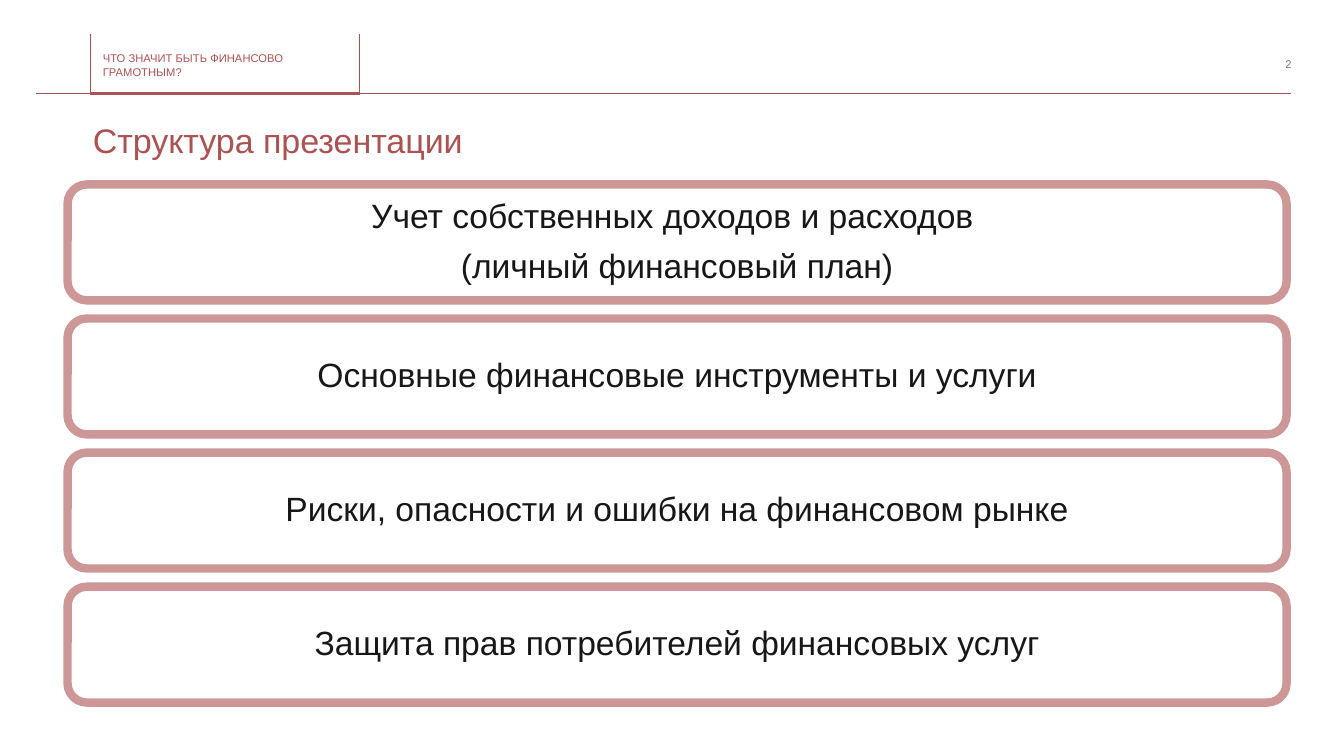
from lxml.etree import SubElement
from pptx import Presentation
from pptx.dml.color import RGBColor
from pptx.enum.shapes import MSO_CONNECTOR, MSO_SHAPE
from pptx.enum.text import MSO_ANCHOR, PP_ALIGN
from pptx.oxml.ns import qn
from pptx.util import Inches, Pt

RED = RGBColor(0xAB, 0x52, 0x53)
PINK = RGBColor(0xCD, 0x97, 0x97)
GRAY = RGBColor(0x77, 0x77, 0x7A)
DARK = RGBColor(0x18, 0x17, 0x17)
WHITE = RGBColor(0xFF, 0xFF, 0xFF)
FONT = "Arial"

SECTION = "ЧТО ЗНАЧИТ БЫТЬ ФИНАНСОВО ГРАМОТНЫМ?"
TITLE = "Структура презентации"
PAGE_NUMBER = "2"
TOPICS = [
    "Учет собственных доходов и расходов \n(личный финансовый план)",
    "Основные финансовые инструменты и услуги",
    "Риски, опасности и ошибки на финансовом рынке",
    "Защита прав потребителей финансовых услуг",
]

# start x, start y, end x, end y in inches, width in points
HEADER_LINES = [
    (0.89, 0.92, 0.36, 0.92, 0.25),
    (3.57, 0.93, 0.89, 0.93, 2.25),
    (12.8, 0.92, 3.55, 0.92, 0.25),
    (0.89, 0.93, 0.89, 0.34, 0.25),
    (3.56, 0.93, 3.56, 0.34, 0.25),
]

CARD_LEFT, CARD_TOP, CARD_WIDTH, CARD_HEIGHT = 0.67, 1.83, 12.09, 1.15
CARD_PITCH = 1.33


def write_text(shape, text, size, color, align=PP_ALIGN.LEFT, inset=0,
               line_spacing=1.0, space_after=0):
    """Fill a shape with middle-anchored, uniformly formatted text."""
    frame = shape.text_frame
    frame.word_wrap = True
    frame.vertical_anchor = MSO_ANCHOR.MIDDLE
    frame.margin_left = frame.margin_right = Inches(inset)
    frame.margin_top = frame.margin_bottom = Inches(inset)
    frame.text = text
    for paragraph in frame.paragraphs:
        paragraph.alignment = align
        paragraph.line_spacing = line_spacing
        paragraph.space_after = Pt(space_after)
        for run in paragraph.runs:
            run.font.name = FONT
            run.font.size = Pt(size)
            run.font.color.rgb = color


def add_label(slide, box, *text_arguments, **text_options):
    label = slide.shapes.add_textbox(*map(Inches, box))
    write_text(label, *text_arguments, **text_options)


def add_header_line(slide, *ends, width):
    line = slide.shapes.add_connector(MSO_CONNECTOR.STRAIGHT, *map(Inches, ends))
    line.line.color.rgb = RED
    line.line.width = Pt(width)
    SubElement(line.element.spPr, qn("a:effectLst"))


def add_card(slide, top, text):
    card = slide.shapes.add_shape(
        MSO_SHAPE.ROUNDED_RECTANGLE, Inches(CARD_LEFT), Inches(top),
        Inches(CARD_WIDTH), Inches(CARD_HEIGHT))
    card.shadow.inherit = False
    card.fill.solid()
    card.fill.fore_color.rgb = WHITE
    card.line.color.rgb = PINK
    card.line.width = Pt(6)
    write_text(card, text, 24, DARK, PP_ALIGN.CENTER, inset=0.1,
               line_spacing=0.9, space_after=9.5)


def main():
    presentation = Presentation()
    presentation.slide_width = Inches(13.33)
    presentation.slide_height = Inches(7.5)
    slide = presentation.slides.add_slide(presentation.slide_layouts[6])

    for *ends, width in HEADER_LINES:
        add_header_line(slide, *ends, width=width)
    add_label(slide, (1.02, 0.51, 2.49, 0.27), SECTION, 8, RED)
    add_label(slide, (0.92, 0.93, 11.88, 0.97), TITLE, 24.3, RED, line_spacing=0.9)
    add_label(slide, (12.28, 0.38, 0.53, 0.51), PAGE_NUMBER, 8, GRAY, PP_ALIGN.RIGHT)
    for index, topic in enumerate(TOPICS):
        add_card(slide, CARD_TOP + index * CARD_PITCH, topic)

    presentation.save("out.pptx")


if __name__ == "__main__":
    main()
